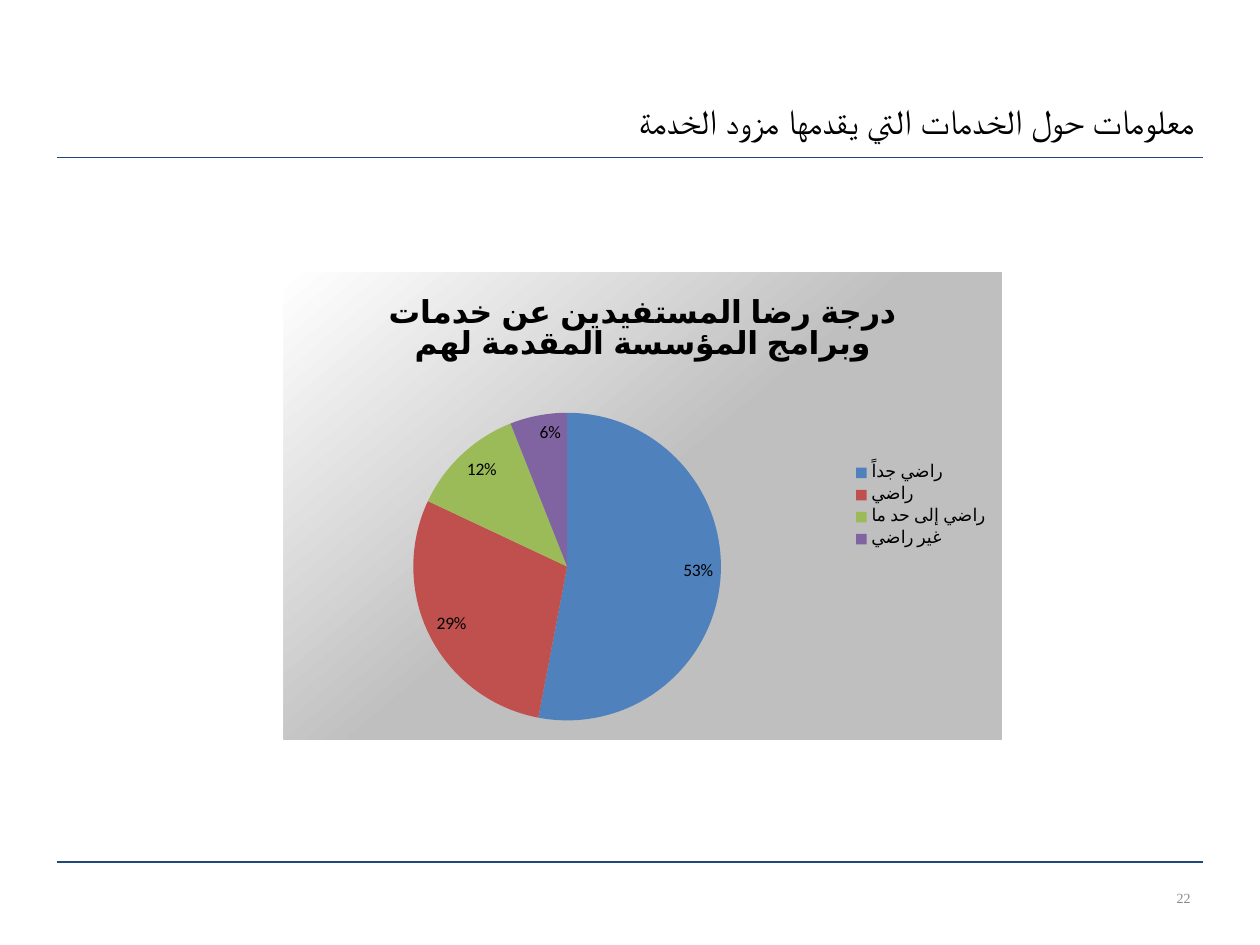
import pptx
import pptx.chart.data
import pptx.dml.color
import pptx.enum.chart
import pptx.enum.shapes
import pptx.enum.text
import pptx.oxml
import pptx.oxml.ns
import pptx.util
from dataclasses import dataclass

Pt = pptx.util.Pt
qn = pptx.oxml.ns.qn

# Content
HEADING = "معلومات حول الخدمات التي يقدمها مزود الخدمة"
PAGE_NUMBER = "22"
CHART_TITLE = "درجة رضا المستفيدين عن خدمات وبرامج المؤسسة المقدمة لهم"
SATISFACTION = [  # answer, share in percent, slice colour
    ("راضي جداً", 53, "4F81BD"),
    ("راضي", 29, "C0504D"),
    ("راضي إلى حد ما", 12, "9BBB59"),
    ("غير راضي", 6, "8064A2"),
]

# Places in points: left, top, width, height
SLIDE_SIZE = (720, 540)
HEADING_BOX = (166.3, 20.9, 523.4, 63.4)
NUMBER_BOX = (622, 497.5, 65.5, 31.7)
CHART_BOX = (162, 156, 410.4, 266.4)
RULE_TOPS = (90, 492.5)
RULE_ENDS = (32.4, 687.6)
PIE_LAYOUT = {"x": 0.18, "y": 0.3, "w": 0.43, "h": 0.66}  # shares of the chart


@dataclass(frozen=True)
class Theme:
    ink: str = "000000"
    muted: str = "898989"
    rule: str = "1F497D"
    chart_light: str = "FFFFFF"
    chart_dark: str = "BFBFBF"
    heading_font: str = "Roboto"
    number_font: str = "Times New Roman"
    chart_font: str = "Calibri"
    heading_size: int = 20
    number_size: int = 8
    chart_title_size: int = 18
    chart_size: int = 10


THEME = Theme()


def rgb(value):
    return pptx.dml.color.RGBColor.from_string(value)


def style(font, name, size, colour, bold=False):
    font.name, font.size, font.bold = name, Pt(size), bold
    font.color.rgb = rgb(colour)


def add_line_of_text(slide, box, text, anchor, name, size, colour, rtl=False):
    frame = slide.shapes.add_textbox(*map(Pt, box)).text_frame
    frame.word_wrap = True
    frame.vertical_anchor = anchor
    paragraph = frame.paragraphs[0]
    paragraph.alignment = pptx.enum.text.PP_ALIGN.RIGHT
    if rtl:
        paragraph._p.get_or_add_pPr().set("rtl", "1")
    run = paragraph.add_run()
    run.text = text
    style(run.font, name, size, colour)


def add_rule(slide, top):
    left, right = RULE_ENDS
    rule = slide.shapes.add_connector(
        pptx.enum.shapes.MSO_CONNECTOR.STRAIGHT, Pt(left), Pt(top), Pt(right), Pt(top))
    rule.line.color.rgb = rgb(THEME.rule)
    rule.line.width = Pt(0.75)
    rule._element.spPr.append(pptx.oxml.parse_xml(
        f"<a:effectLst {pptx.oxml.ns.nsdecls('a')}/>"))


def shade_chart(chart):
    stops = "".join(
        f'<a:gs pos="{position * 1000}"><a:srgbClr val="{colour}"/></a:gs>'
        for position, colour in ((0, THEME.chart_light), (50, THEME.chart_dark),
                                 (100, THEME.chart_dark)))
    area = pptx.oxml.parse_xml(
        f"<c:spPr {pptx.oxml.ns.nsdecls('c', 'a')}><a:gradFill><a:gsLst>{stops}</a:gsLst>"
        f'<a:lin ang="{50 * 60000}" scaled="0"/></a:gradFill>'
        "<a:ln><a:noFill/></a:ln></c:spPr>")
    chart._chartSpace.find(qn("c:chart")).addnext(area)


def place_pie(chart):
    plot_area = chart._chartSpace.find(qn("c:chart")).find(qn("c:plotArea"))
    for automatic in plot_area.findall(qn("c:layout")):
        plot_area.remove(automatic)
    modes = "".join(f'<c:{axis}Mode val="edge"/>' for axis in "xy")
    shares = "".join(f'<c:{key} val="{share}"/>' for key, share in PIE_LAYOUT.items())
    plot_area.insert(0, pptx.oxml.parse_xml(
        f"<c:layout {pptx.oxml.ns.nsdecls('c')}><c:manualLayout>"
        f'<c:layoutTarget val="inner"/>{modes}{shares}</c:manualLayout></c:layout>'))


def add_satisfaction_chart(slide):
    answers, shares, colours = zip(*SATISFACTION)
    data = pptx.chart.data.CategoryChartData()
    data.categories = answers
    data.add_series("Series 1", shares)
    chart = slide.shapes.add_chart(
        pptx.enum.chart.XL_CHART_TYPE.PIE, *map(Pt, CHART_BOX), data).chart
    style(chart.font, THEME.chart_font, THEME.chart_size, THEME.ink)

    # Title
    chart.has_title = True
    chart.chart_title.include_in_layout = False
    paragraph = chart.chart_title.text_frame.paragraphs[0]
    paragraph._p.get_or_add_pPr().set("rtl", "1")
    run = paragraph.add_run()
    run.text = CHART_TITLE
    style(run.font, THEME.chart_font, THEME.chart_title_size, THEME.ink, bold=True)

    # Legend
    chart.has_legend = True
    chart.legend.position = pptx.enum.chart.XL_LEGEND_POSITION.RIGHT
    chart.legend.include_in_layout = False

    # Slices and their percentages
    pie = chart.plots[0]
    pie.vary_by_categories = True
    for index, colour in enumerate(colours):
        fill = pie.series[0].points[index].format.fill
        fill.solid()
        fill.fore_color.rgb = rgb(colour)
    pie.has_data_labels = True
    labels = pie.data_labels
    labels.show_percentage, labels.show_value = True, False
    labels.number_format, labels.number_format_is_linked = "0%", False
    labels.position = pptx.enum.chart.XL_LABEL_POSITION.INSIDE_END
    style(labels.font, THEME.chart_font, THEME.chart_size, THEME.ink)

    place_pie(chart)
    shade_chart(chart)


def main():
    deck = pptx.Presentation()
    deck.slide_width, deck.slide_height = map(Pt, SLIDE_SIZE)
    slide = deck.slides.add_slide(deck.slide_layouts[6])
    anchors = pptx.enum.text.MSO_ANCHOR

    # Frame of the page
    for top in RULE_TOPS:
        add_rule(slide, top)
    add_line_of_text(slide, NUMBER_BOX, PAGE_NUMBER, anchors.MIDDLE,
                     THEME.number_font, THEME.number_size, THEME.muted)

    # Heading and chart
    add_line_of_text(slide, HEADING_BOX, HEADING, anchors.BOTTOM,
                     THEME.heading_font, THEME.heading_size, THEME.ink, rtl=True)
    add_satisfaction_chart(slide)
    deck.save("out.pptx")


if __name__ == "__main__":
    main()
